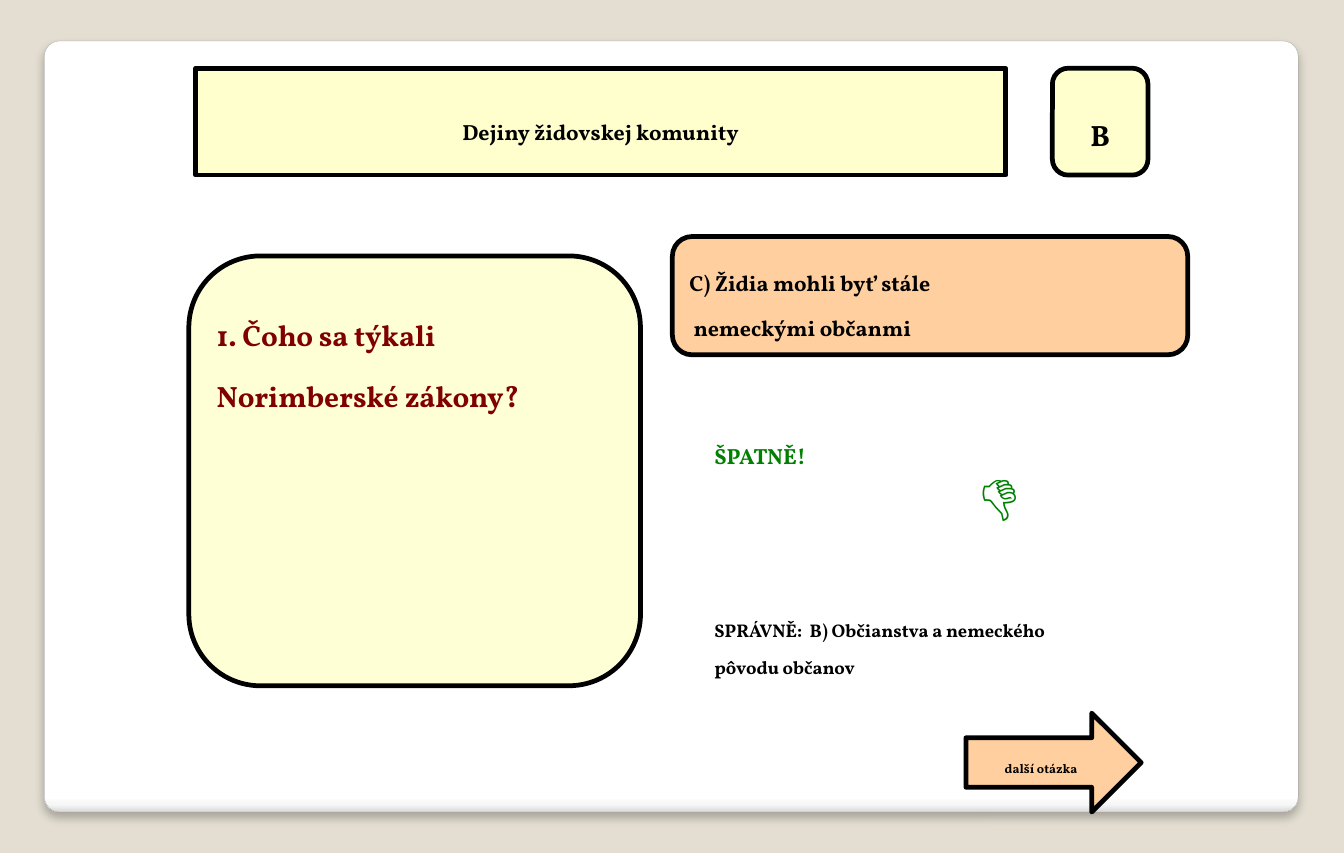
from lxml import etree
from pptx import Presentation
from pptx import util as u
from pptx.dml.color import RGBColor
from pptx.enum import shapes, text
from pptx.oxml import parse_xml
from pptx.oxml.ns import qn

COLORS = {
    "backdrop": "E3DED1", "card_edge": "A4A4A4", "line": "000000",
    "yellow": "FFFF99", "orange": "FF9933", "black": "000000",
    "green": "008000", "maroon": "800000",
}
DRAWING = 'xmlns:a="http://schemas.openxmlformats.org/drawingml/2006/main"'
KINDS = shapes.MSO_SHAPE
ALIGN = text.PP_ALIGN
MIDDLE, TOP = text.MSO_ANCHOR.MIDDLE, text.MSO_ANCHOR.TOP

deck = Presentation()
deck.slide_width, deck.slide_height = u.Emu(10801350), u.Inches(7.5)
page = deck.slides.add_slide(deck.slide_layouts[5])
page.background.fill.solid()
page.background.fill.fore_color.rgb = RGBColor.from_string(COLORS["backdrop"])


def paint(panel, color, opacity):
    panel.shadow.inherit = False
    panel.fill.solid()
    panel.fill.fore_color.rgb = RGBColor.from_string(COLORS[color])
    tint = panel.fill._xPr.find(qn("a:solidFill"))[0]
    etree.SubElement(tint, qn("a:alpha")).set("val", str(opacity * 1000))
    panel.line.color.rgb = RGBColor.from_string(COLORS["line"])
    panel.line.width = u.Pt(3)


def write(box, lines, size, color="black", align=ALIGN.LEFT, anchor=MIDDLE, wrap=False):
    frame = box.text_frame
    frame.word_wrap = wrap
    frame.auto_size = text.MSO_AUTO_SIZE.NONE
    frame.vertical_anchor = anchor
    for index, line in enumerate(lines):
        para = frame.paragraphs[0] if index == 0 else frame.add_paragraph()
        para.alignment = align
        para.line_spacing = u.Pt(size * 1.2)
        span = para.add_run()
        span.text = line
        span.font.name = "Vollkorn"
        span.font.size = u.Pt(size)
        span.font.bold = True
        span.font.color.rgb = RGBColor.from_string(COLORS[color])
        span.font._element.set("baseline", "-15000")


card = page.shapes.add_shape(KINDS.ROUNDED_RECTANGLE, *map(u.Inches, (0.39, 0.36, 11.02, 6.78)))
card.adjustments[0] = 0.02
card.line.color.rgb = RGBColor.from_string(COLORS["card_edge"])
card.line.width = u.Pt(0.16)
card.fill.gradient()
card.fill.gradient_angle = 270
stops = card.fill._xPr.find(qn("a:gradFill")).find(qn("a:gsLst"))
for stop in list(stops):
    stops.remove(stop)
for share, shade in ((0, "FFFFFF"), (98, "FFFFFF"), (99, "F7F7F7"), (100, "DADADA")):
    stop = etree.SubElement(stops, qn("a:gs"), pos=str(share * 1000))
    etree.SubElement(stop, qn("a:srgbClr"), val=shade)
card.shadow.inherit = False
effects = card._element.spPr.find(qn("a:effectLst"))
effects.append(parse_xml(
    f'<a:outerShdw {DRAWING} blurRad="{u.Pt(6)}" dist="{u.Pt(4)}" dir="5400000" '
    'algn="t" rotWithShape="0"><a:srgbClr val="000000">'
    '<a:alpha val="25000"/></a:srgbClr></a:outerShdw>'))

title = page.shapes.title
title.left, title.top, title.width, title.height = map(u.Inches, (1.72, 0.6, 7.12, 0.94))
title._element.spPr.append(parse_xml(f'<a:prstGeom {DRAWING} prst="roundRect"><a:avLst/></a:prstGeom>'))
paint(title, "yellow", 49)
write(title, ["Dejiny židovskej komunity"], 24, align=ALIGN.CENTER)
page.shapes._spTree.append(title._element)

panels = [
    (KINDS.FLOWCHART_ALTERNATE_PROCESS, (9.25, 0.6, 0.84, 0.94), "yellow", 49,
     ["B"], 32, ALIGN.CENTER),
    (KINDS.FLOWCHART_ALTERNATE_PROCESS, (5.91, 2.08, 4.53, 1.04), "orange", 47,
     ["C) Židia mohli byť stále", " nemeckými občanmi"], 24, ALIGN.LEFT),
    (KINDS.RIGHT_ARROW, (8.49, 6.27, 1.54, 0.87), "orange", 47,
     ["další otázka"], 14, ALIGN.CENTER),
]
for kind, place, color, opacity, lines, size, align in panels:
    panel = page.shapes.add_shape(kind, *map(u.Inches, place))
    paint(panel, color, opacity)
    write(panel, lines, size, align=align)

question = page.shapes.add_shape(
    KINDS.FLOWCHART_ALTERNATE_PROCESS, *map(u.Inches, (1.66, 2.25, 3.97, 3.78)))
paint(question, "yellow", 40)
write(question, ["1. Čoho sa týkali Norimberské zákony?"], 32, "maroon", anchor=TOP, wrap=True)
frame = question.text_frame
frame.margin_left = frame.margin_right = u.Inches(0.06)
frame.margin_top, frame.margin_bottom = u.Inches(0.13), u.Inches(0.05)

notes = [
    ((6.18, 3.67, 2.3, 0.5), ["ŠPATNĚ!"], 24, "green", True),
    ((8.49, 3.44, 0.88, 1.31), ["👎"], 72, "green", False),
    ((6.18, 5.25, 3.88, 1.62),
     ["SPRÁVNĚ:  B) Občianstva a nemeckého", "pôvodu občanov"], 20, "black", True),
]
for place, lines, size, color, wrap in notes:
    box = page.shapes.add_textbox(*map(u.Inches, place))
    write(box, lines, size, color, anchor=TOP, wrap=wrap)

deck.save("out.pptx")
